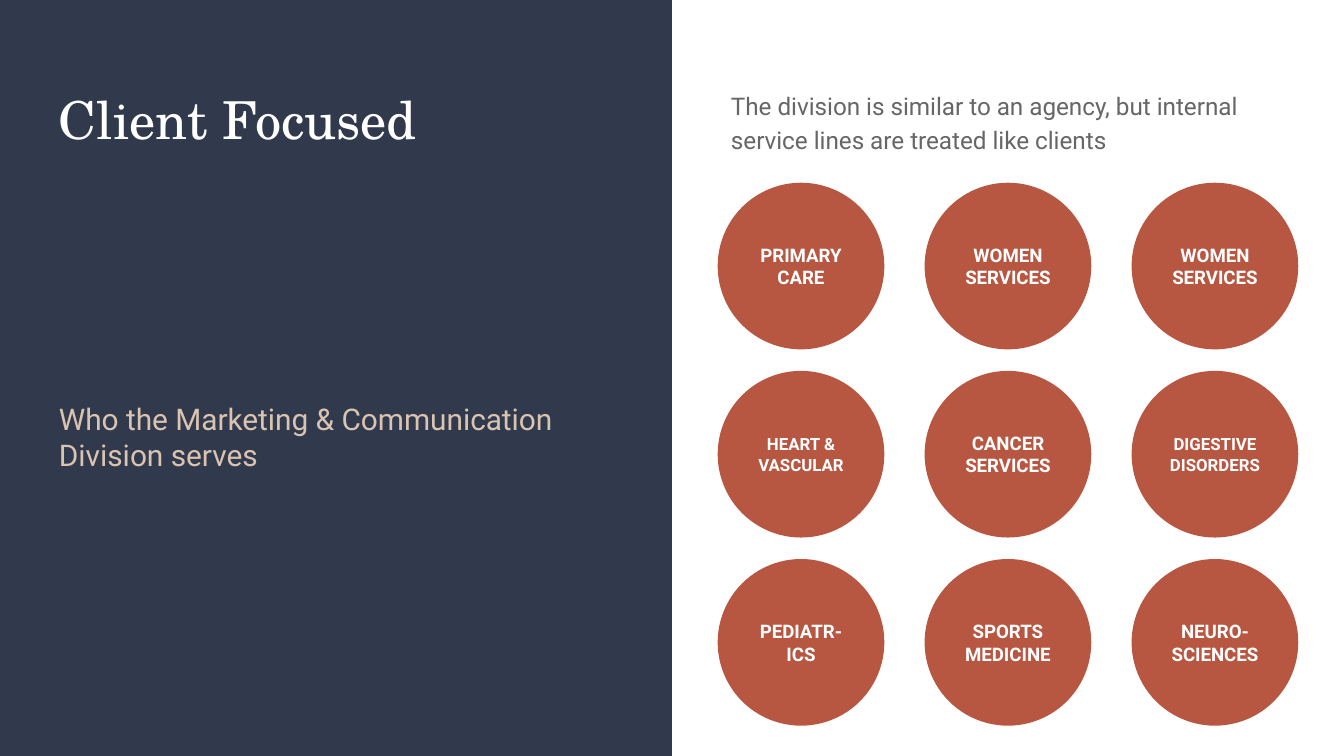
from pptx import Presentation
from pptx.dml.color import RGBColor
from pptx.enum.shapes import MSO_SHAPE as Preset
from pptx.enum.text import MSO_ANCHOR as Anchor, PP_ALIGN as Align
from pptx.util import Inches, Pt

NAVY = RGBColor(0x31, 0x39, 0x4D)
WHITE = RGBColor(0xFF, 0xFF, 0xFF)
SAND = RGBColor(0xD9, 0xC4, 0xB1)
GRAY = RGBColor(0x66, 0x66, 0x66)
RUST = RGBColor(0xB8, 0x57, 0x41)

SLIDE_WIDTH = 10
SLIDE_HEIGHT = SLIDE_WIDTH * 9 / 16
SERIF, SANS = "TeX Gyre Schola", "Roboto"
INSET = 0.1

SERVICE_LINES = [
    [("PRIMARY CARE", 10), ("WOMEN SERVICES", 10), ("WOMEN SERVICES", 10)],
    [("HEART & VASCULAR", 9), ("CANCER SERVICES", 10), ("DIGESTIVE DISORDERS", 9)],
    [("PEDIATR-\nICS", 10), ("SPORTS MEDICINE", 10), ("NEURO-\nSCIENCES", 10)],
]


def write_text(shape, text, size, color, font_name=SANS, bold=False):
    frame = shape.text_frame
    frame.word_wrap = True
    frame.margin_left = frame.margin_right = Inches(INSET)
    frame.margin_top = frame.margin_bottom = Inches(INSET)
    frame.text = text
    for paragraph in frame.paragraphs:
        font = paragraph.font
        font.name, font.size, font.bold = font_name, Pt(size), bold
        font.color.rgb = color
    return frame


def add_text(slide, left, top, width, height, *style):
    box = slide.shapes.add_textbox(
        Inches(left), Inches(top), Inches(width), Inches(height))
    return write_text(box, *style)


def add_filled_shape(slide, preset, left, top, width, height, color):
    shape = slide.shapes.add_shape(
        preset, Inches(left), Inches(top), Inches(width), Inches(height))
    shape.shadow.inherit = False
    shape.fill.solid()
    shape.fill.fore_color.rgb = color
    shape.line.fill.background()
    return shape


def add_title_panel(slide, left, top, width, height):
    add_filled_shape(slide, Preset.RECTANGLE, left, top, width, height, NAVY)
    add_text(slide, left + 0.34, top + 0.55, 4.05, 2.24,
             "Client Focused", 28, WHITE, SERIF)
    add_text(slide, left + 0.34, top + 2.88, 4.05, 1.01,
             "Who the Marketing & Communication Division serves", 16, SAND)


def add_introduction(slide, left, top, width, height):
    frame = add_text(
        slide, left, top, width, height,
        "The division is similar to an agency, but internal "
        "service lines are treated like clients", 13, GRAY)
    paragraph = frame.paragraphs[0]
    paragraph.line_spacing = 1.15
    paragraph.space_after = Pt(16)


def add_service_grid(slide, left, top, width, height, diameter=1.24):
    column_step = (width - diameter) / (len(SERVICE_LINES[0]) - 1)
    row_step = (height - diameter) / (len(SERVICE_LINES) - 1)
    for row, services in enumerate(SERVICE_LINES):
        for column, (name, size) in enumerate(services):
            circle = add_filled_shape(
                slide, Preset.OVAL, left + column * column_step,
                top + row * row_step, diameter, diameter, RUST)
            frame = write_text(circle, name, size, WHITE, bold=True)
            frame.vertical_anchor = Anchor.MIDDLE
            for paragraph in frame.paragraphs:
                paragraph.alignment = Align.CENTER


def main():
    presentation = Presentation()
    presentation.slide_width = Inches(SLIDE_WIDTH)
    presentation.slide_height = Inches(SLIDE_HEIGHT)
    slide = presentation.slides.add_slide(presentation.slide_layouts[6])
    add_title_panel(slide, 0, 0, SLIDE_WIDTH / 2, SLIDE_HEIGHT)
    add_introduction(slide, 5.34, 0.55, 4.32, 0.92)
    add_service_grid(slide, 5.34, 1.36, 4.32, 4.04)
    presentation.save("out.pptx")


if __name__ == "__main__":
    main()
